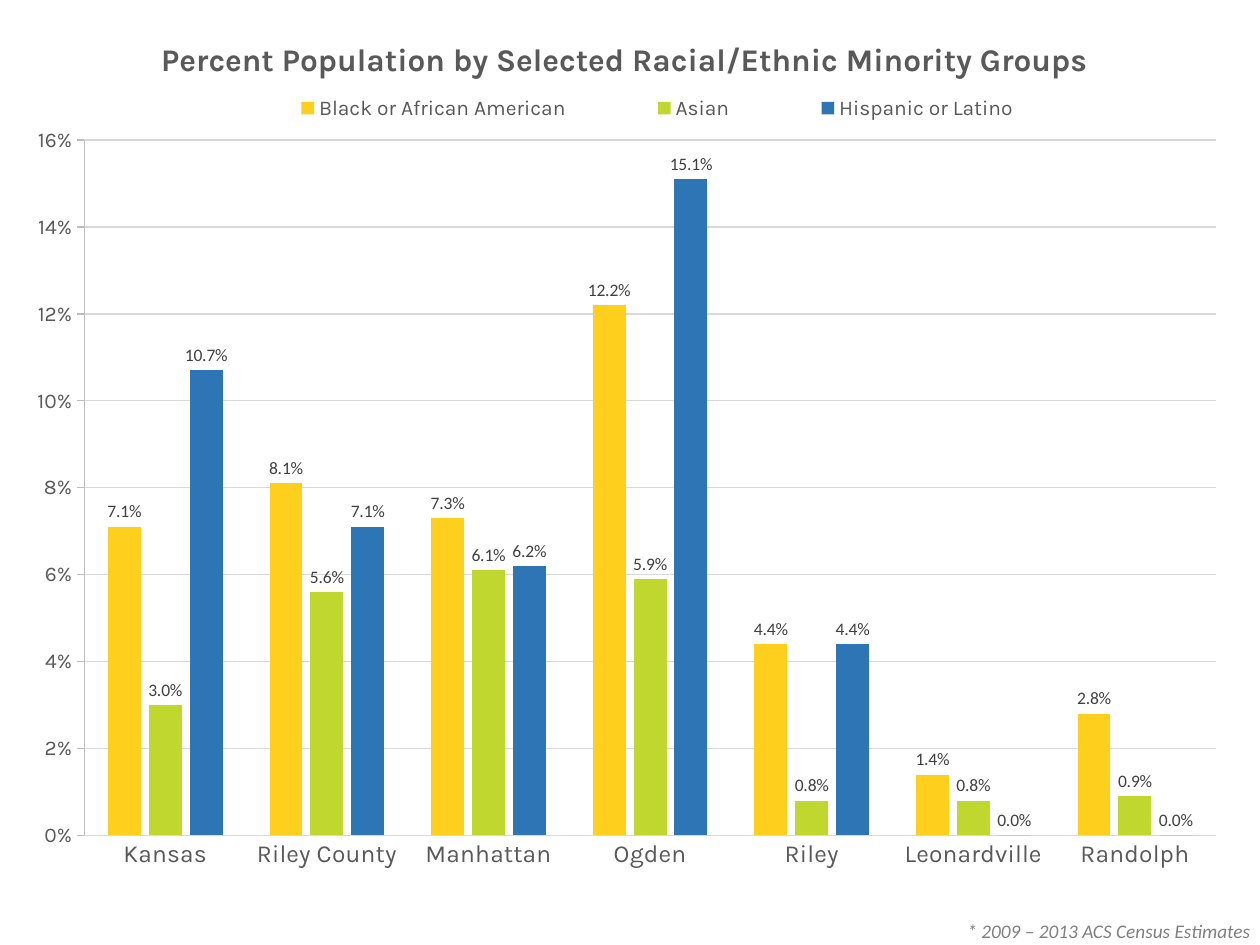
from lxml import etree
from pptx import Presentation
from pptx.chart.data import CategoryChartData
from pptx.dml.color import RGBColor
from pptx.enum import chart as ch, text
from pptx.oxml import ns
from pptx.util import Inches, Pt

GREY = "595959"
PALE = "D9D9D9"
PLACES = ["Kansas", "Riley County", "Manhattan", "Ogden", "Riley", "Leonardville", "Randolph"]
GROUPS = [
    ("Black or African American", "FFCF1D", [0.071, 0.081, 0.073, 0.122, 0.044, 0.014, 0.028]),
    ("Asian", "C0D730", [0.03, 0.056, 0.061, 0.059, 0.008, 0.008, 0.009]),
    ("Hispanic or Latino", "2E75B6", [0.107, 0.071, 0.062, 0.151, 0.044, 0, 0]),
]


def color(hex_value):
    return RGBColor.from_string(hex_value)


def style_font(font, size, hex_value, name="Karla", bold=False, italic=False):
    font.size = Pt(size)
    font.name = name
    font.bold = bold
    font.italic = italic
    font.color.rgb = color(hex_value)


def style_line(line, hex_value):
    line.width = Pt(0.75)
    line.color.rgb = color(hex_value)


def place(part, index, position, target=None):
    for old in part.findall(ns.qn("c:layout")):
        part.remove(old)
    layout = etree.Element(ns.qn("c:layout"))
    manual = etree.SubElement(layout, ns.qn("c:manualLayout"))
    settings = [("layoutTarget", target)] if target else []
    settings += [("xMode", "edge"), ("yMode", "edge")]
    settings += zip("xywh", position)
    for tag, value in settings:
        etree.SubElement(manual, ns.qn(f"c:{tag}")).set("val", str(value))
    part.insert(index, layout)


def add_title(chart, words):
    chart.has_title = True
    title = chart.chart_title
    run = title.text_frame.paragraphs[0].add_run()
    run.text = words
    style_font(run.font, 18, GREY, bold=True)
    title.include_in_layout = False
    place(title._element, 1, (0.137, 0.025))


def add_legend(chart):
    chart.has_legend = True
    legend = chart.legend
    legend.position = ch.XL_LEGEND_POSITION.TOP
    legend.include_in_layout = False
    style_font(legend.font, 12, GREY)
    place(legend._element, 1, (0.184, 0.085, 0.683, 0.04))


def style_axes(chart):
    places, shares = chart.category_axis, chart.value_axis
    places.major_tick_mark = ch.XL_TICK_MARK.NONE
    style_font(places.tick_labels.font, 14, GREY)
    style_line(places.format.line, PALE)
    shares.minimum_scale, shares.maximum_scale, shares.major_unit = 0, 0.16, 0.02
    shares.major_tick_mark = ch.XL_TICK_MARK.OUTSIDE
    shares.tick_labels.number_format = "0%"
    shares.tick_labels.number_format_is_linked = False
    style_font(shares.tick_labels.font, 12, GREY)
    style_line(shares.format.line, "BDBDBD")
    style_line(shares.major_gridlines.format.line, PALE)


def style_columns(plot):
    plot.gap_width = 142
    plot.overlap = -24
    plot.vary_by_categories = False
    for group, (_, fill, _) in zip(plot.series, GROUPS):
        group.format.fill.solid()
        group.format.fill.fore_color.rgb = color(fill)
        group.invert_if_negative = False
        labels = group.data_labels
        labels.show_value = True
        labels.number_format = "0.0%"
        labels.number_format_is_linked = False
        labels.position = ch.XL_LABEL_POSITION.OUTSIDE_END
        style_font(labels.font, 10, "404040", "Calibri")


def add_population_chart(slide):
    population = CategoryChartData(number_format="0.0%")
    population.categories = PLACES
    for name, _, shares in GROUPS:
        population.add_series(name, shares)
    chart = slide.shapes.add_chart(
        ch.XL_CHART_TYPE.COLUMN_CLUSTERED,
        Inches(-0.17), Inches(0.08), Inches(10.25), Inches(7.42), population,
    ).chart
    style_font(chart.font, 10, "000000", "Calibri")
    add_title(chart, "Percent Population by Selected Racial/Ethnic Minority Groups")
    add_legend(chart)
    style_axes(chart)
    style_columns(chart.plots[0])
    plot_area = chart._chartSpace.find(f".//{ns.qn('c:plotArea')}")
    place(plot_area, 0, (0.082, 0.139, 0.876, 0.744), "inner")


def add_source_note(slide, words):
    note = slide.shapes.add_textbox(Inches(7.58), Inches(7.25), Inches(2.42), Inches(0.25))
    frame = note.text_frame
    frame.word_wrap = False
    frame.margin_right = Inches(0)
    frame.vertical_anchor = text.MSO_ANCHOR.TOP
    run = frame.paragraphs[0].add_run()
    run.text = words
    style_font(run.font, 11, "808080", "Calibri", italic=True)


def main():
    deck = Presentation()
    deck.slide_width, deck.slide_height = Inches(10), Inches(7.5)
    slide = deck.slides.add_slide(deck.slide_layouts[6])
    add_source_note(slide, "* 2009 – 2013 ACS Census Estimates")
    add_population_chart(slide)
    deck.save("out.pptx")


if __name__ == "__main__":
    main()
